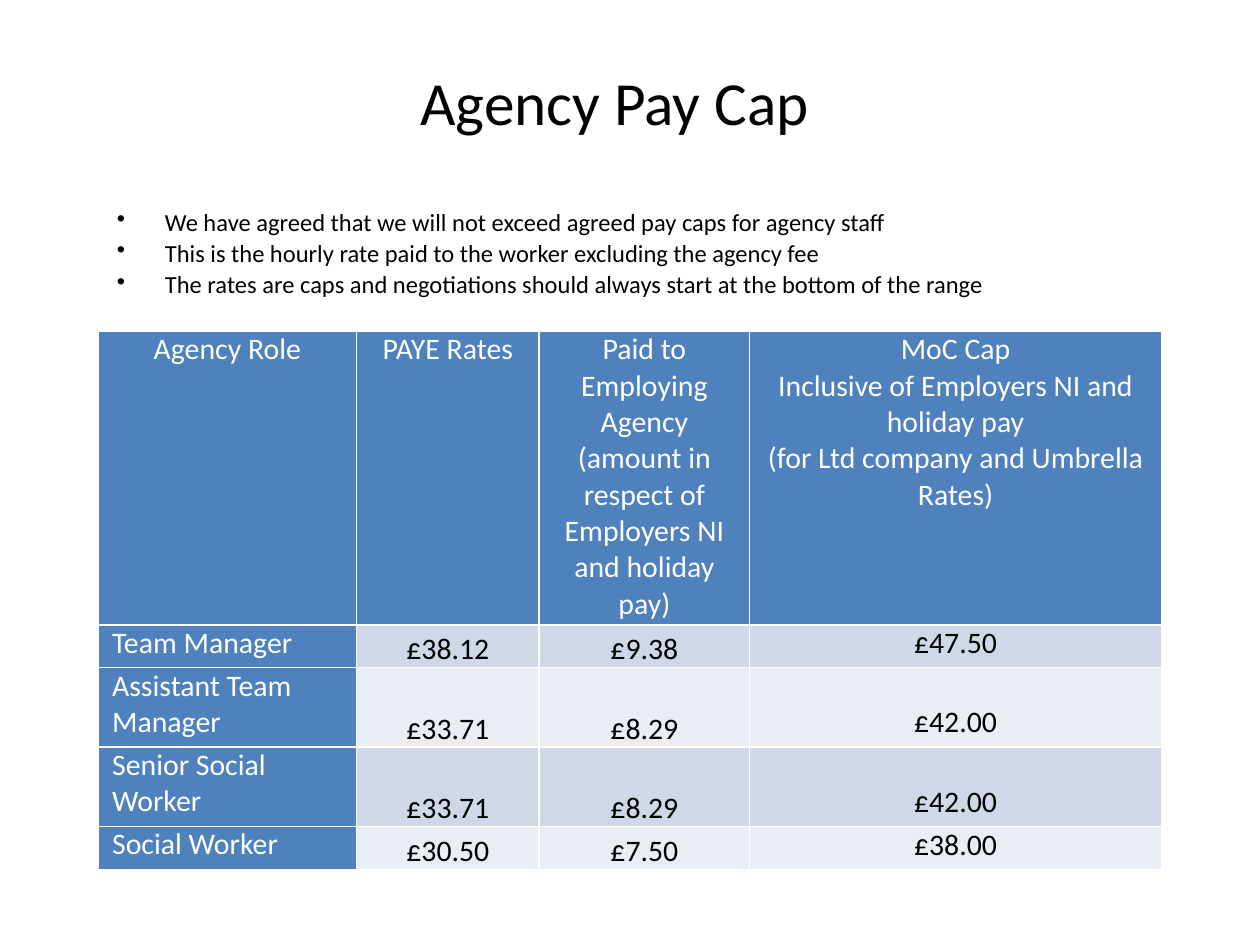
from lxml.etree import SubElement
from pptx import Presentation
from pptx.dml.color import RGBColor
from pptx.enum.text import MSO_ANCHOR, PP_ALIGN
from pptx.oxml.ns import qn
from pptx.util import Inches, Pt

COLORS = {"text": "000000", "white": "FFFFFF", "head": "4F81BD",
          "odd": "D0D8E8", "even": "E9EDF4"}
POINTS = [
    "We have agreed that we will not exceed agreed pay caps for agency staff",
    "This is the hourly rate paid to the worker excluding the agency fee",
    "The rates are caps and negotiations should always start at the bottom of the range",
]
ROWS = [
    ["Agency Role", "PAYE Rates",
     "Paid to Employing Agency (amount in respect of Employers NI and holiday pay)",
     "MoC Cap\nInclusive of Employers NI and holiday pay\n"
     "(for Ltd company and Umbrella Rates)"],
    ["Team Manager", "£38.12", "£9.38", "£47.50"],
    ["Assistant Team Manager", "£33.71", "£8.29", "£42.00"],
    ["Senior Social Worker", "£33.71", "£8.29", "£42.00"],
    ["Social Worker", "£30.50", "£7.50", "£38.00"],
]
WIDTHS = [2.05, 1.45, 1.67, 3.27]
HEIGHTS = [2.33, 0.34, 0.63, 0.63, 0.34]


def write(frame, text, size, color, align):
    frame.word_wrap = True
    frame.text = text
    for para in frame.paragraphs:
        para.alignment = align
        para.font.name = "Calibri"
        para.font.size = Pt(size)
        para.font.color.rgb = RGBColor.from_string(COLORS[color])


def edge(cell):
    """Draw a thin white line on all four sides of the cell."""
    props = cell._tc.get_or_add_tcPr()
    for side in ("lnL", "lnR", "lnT", "lnB"):
        line = SubElement(props, qn(f"a:{side}"), w=str(Pt(1)))
        fill = SubElement(line, qn("a:solidFill"))
        SubElement(fill, qn("a:srgbClr"), val=COLORS["white"])


prs = Presentation()
prs.slide_width, prs.slide_height = Inches(10), Inches(7.5)
slide = prs.slides.add_slide(prs.slide_layouts[6])

# Title, set slightly left of centre
title = slide.shapes.add_textbox(
    Inches(0.83), Inches(0.19), Inches(8.35), Inches(1.22)).text_frame
write(title, "Agency Pay Cap", 35, "text", PP_ALIGN.CENTER)
title.vertical_anchor = MSO_ANCHOR.MIDDLE
title.margin_right = Inches(0.35)

# Bullet points
body = slide.shapes.add_textbox(
    Inches(0.83), Inches(1.6), Inches(8.35), Inches(0.84)).text_frame
write(body, "\n".join(POINTS), 14, "text", PP_ALIGN.LEFT)
body.vertical_anchor = MSO_ANCHOR.MIDDLE
for para in body.paragraphs:
    para.line_spacing = 0.9
    para.space_before = Pt(2.8)
    props = para._p.get_or_add_pPr()
    props.set("marL", str(Inches(0.38)))
    props.set("indent", str(-Inches(0.38)))
    font = props.find(qn("a:defRPr"))
    mark = SubElement(props, qn("a:buChar"), char="•")
    if font is not None:
        font.addprevious(mark)

# Rate table
table = slide.shapes.add_table(
    len(ROWS), len(WIDTHS), Inches(0.78), Inches(2.63),
    Inches(sum(WIDTHS)), Inches(sum(HEIGHTS))).table
table.first_row = table.horz_banding = False
for col, width in zip(table.columns, WIDTHS):
    col.width = Inches(width)

for r, (texts, height) in enumerate(zip(ROWS, HEIGHTS)):
    table.rows[r].height = Inches(height)
    for c, text in enumerate(texts):
        cell = table.cell(r, c)
        head = r == 0 or c == 0
        role = r > 0 and c == 0
        write(cell.text_frame, text, 17, "white" if head else "text",
              PP_ALIGN.LEFT if role else PP_ALIGN.CENTER)
        cell.margin_left = cell.margin_right = Inches(0.11)
        cell.margin_top = cell.margin_bottom = 0
        cell.vertical_anchor = MSO_ANCHOR.TOP if head else MSO_ANCHOR.BOTTOM
        if c == 3 and not head:
            cell.margin_bottom = Inches(0.05)
        edge(cell)
        cell.fill.solid()
        shade = "head" if head else "odd" if r % 2 else "even"
        cell.fill.fore_color.rgb = RGBColor.from_string(COLORS[shade])

prs.save("out.pptx")
